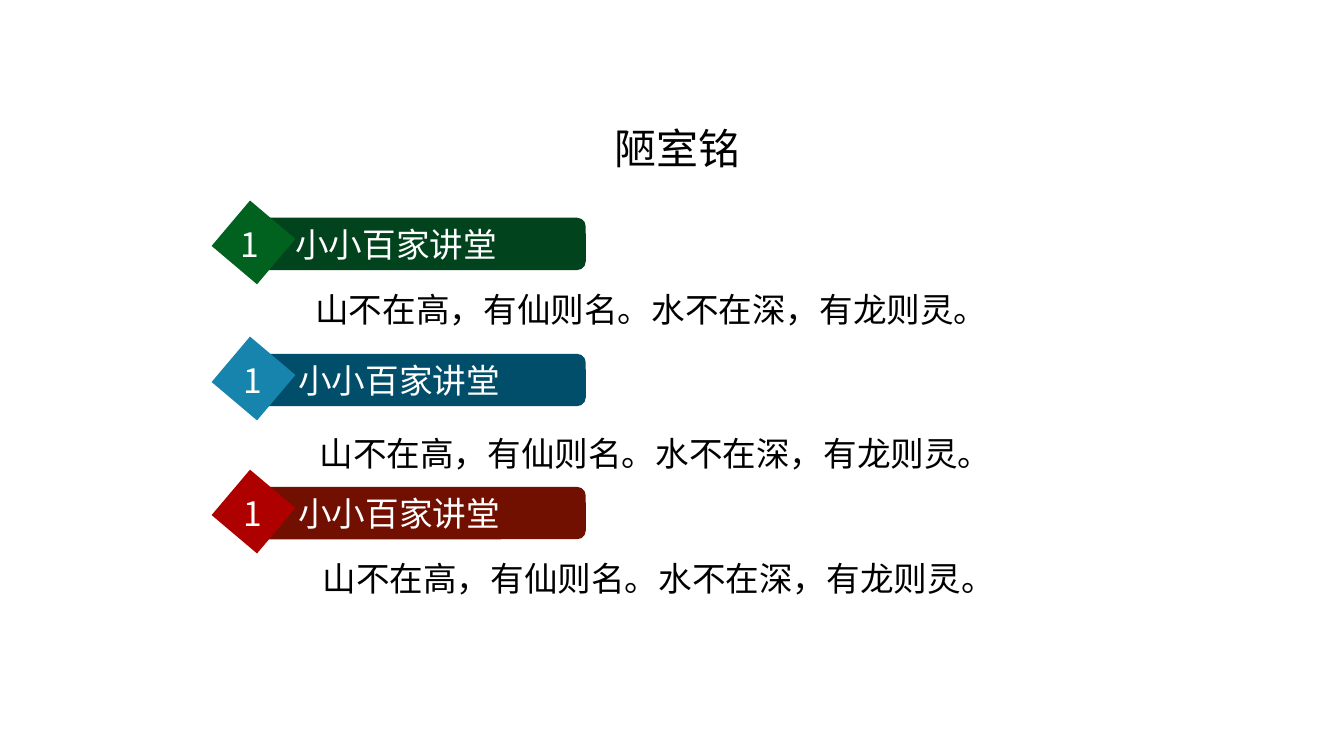
from lxml import etree
from pptx import Presentation
from pptx.dml.color import RGBColor
from pptx.enum import shapes, text
from pptx.oxml import ns
from pptx.util import Inches, Pt

FONT = "Noto Sans CJK SC"
BLACK = RGBColor(0x00, 0x00, 0x00)
WHITE = RGBColor(0xFF, 0xFF, 0xFF)
DARK_GREEN = RGBColor(0x01, 0x43, 0x1D)
GREEN = RGBColor(0x01, 0x62, 0x1F)
DARK_BLUE = RGBColor(0x01, 0x4E, 0x6A)
BLUE = RGBColor(0x17, 0x84, 0xAD)
DARK_RED = RGBColor(0x71, 0x10, 0x00)
RED = RGBColor(0xAF, 0x00, 0x00)

LABEL = "1\t小小百家讲堂"
VERSE = "山不在高，有仙则名。水不在深，有龙则灵。"
LEFT = 2.22
SECTIONS = [
    dict(top=2.11, bar_color=DARK_GREEN, diamond_color=GREEN,
         label_left=0.07, verse_top=0.71, verse_indent=0.3),
    dict(top=3.46, bar_color=DARK_BLUE, diamond_color=BLUE,
         label_left=0.1, verse_top=0.79, verse_indent=0.34),
    dict(top=4.78, bar_color=DARK_RED, diamond_color=RED,
         label_left=0.1, verse_top=0.71, verse_indent=0.37),
]


def add_line(parent, box, wording, size, color, frame_format):
    """Write one line of text in a box and return its paragraph."""
    frame = parent.shapes.add_textbox(*map(Inches, box)).text_frame
    for name, value in frame_format.items():
        setattr(frame, name, value)
    paragraph = frame.paragraphs[0]
    run = paragraph.add_run()
    run.text = wording
    for name, value in dict(size=Pt(size), name=FONT).items():
        setattr(run.font, name, value)
    run.font.color.rgb = color
    etree.SubElement(run.font._element, ns.qn("a:ea"), typeface=FONT)
    return paragraph


def add_block(parent, preset, box, color, rotation=0):
    """Draw a flat filled shape without an outline."""
    block = parent.shapes.add_shape(preset, *map(Inches, box))
    block.rotation = rotation
    block.shadow.inherit = False
    block.fill.solid()
    block.fill.fore_color.rgb = color
    block.line.fill.background()


def add_title(slide, box):
    """Place the centred poem title."""
    title = add_line(slide, box, "陋室铭", 30, BLACK,
                     dict(word_wrap=True, vertical_anchor=text.MSO_ANCHOR.MIDDLE))
    for name, value in dict(alignment=text.PP_ALIGN.CENTER, line_spacing=0.9).items():
        setattr(title, name, value)


def add_section(slide, left, top, bar_color, diamond_color,
                label_left, verse_top, verse_indent):
    """Place a numbered banner with its verse below."""
    growing = dict(word_wrap=True, auto_size=text.MSO_AUTO_SIZE.SHAPE_TO_FIT_TEXT)
    banner = slide.shapes.add_group_shape()
    add_block(banner, shapes.MSO_SHAPE.ROUNDED_RECTANGLE,
              (left + 0.21, top + 0.05, 3.38, 0.52), bar_color)
    add_block(banner, shapes.MSO_SHAPE.RECTANGLE,
              (left, top, 0.59, 0.59), diamond_color, 310.2)
    label = add_line(banner, (left + label_left, top + 0.06, 5.16, 0.5),
                     LABEL, 24, WHITE, growing)
    tabs = etree.SubElement(label._p.get_or_add_pPr(), ns.qn("a:tabLst"))
    etree.SubElement(tabs, ns.qn("a:tab"), pos=str(Inches(0.54)), algn="l")
    verse = add_line(slide, (left + 0.51, top + verse_top, 7.34, 0.5),
                     VERSE, 24, BLACK, growing)
    verse._p.get_or_add_pPr().set("marL", str(Inches(verse_indent)))


def main():
    """Build and save the slide."""
    deck = Presentation()
    deck.slide_width, deck.slide_height = Inches(13.33), Inches(7.5)
    slide = deck.slides.add_slide(deck.slide_layouts[6])
    add_title(slide, (2.23, 1.18, 8.98, 0.63))
    for section in SECTIONS:
        add_section(slide, LEFT, **section)
    deck.save("out.pptx")


if __name__ == "__main__":
    main()
